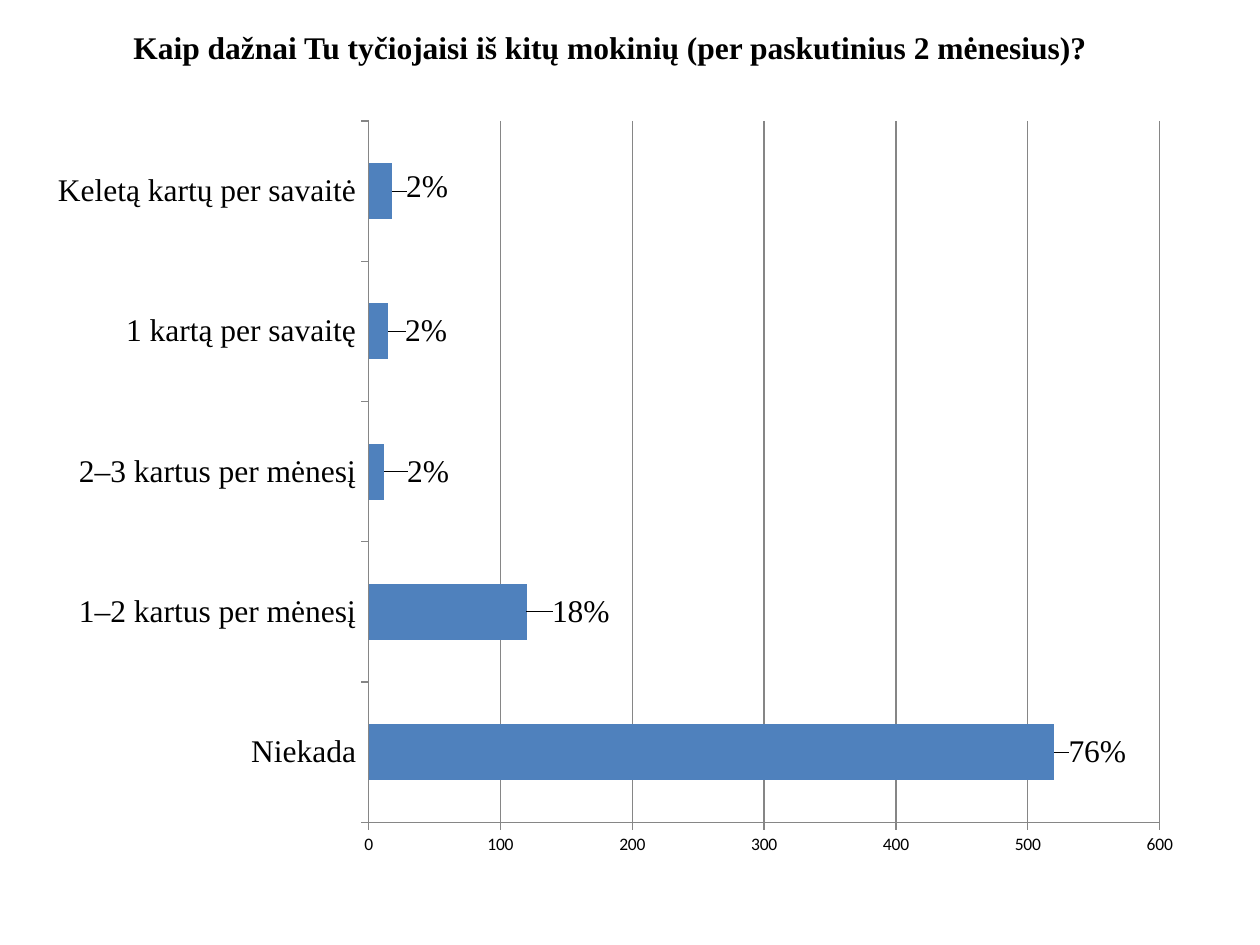
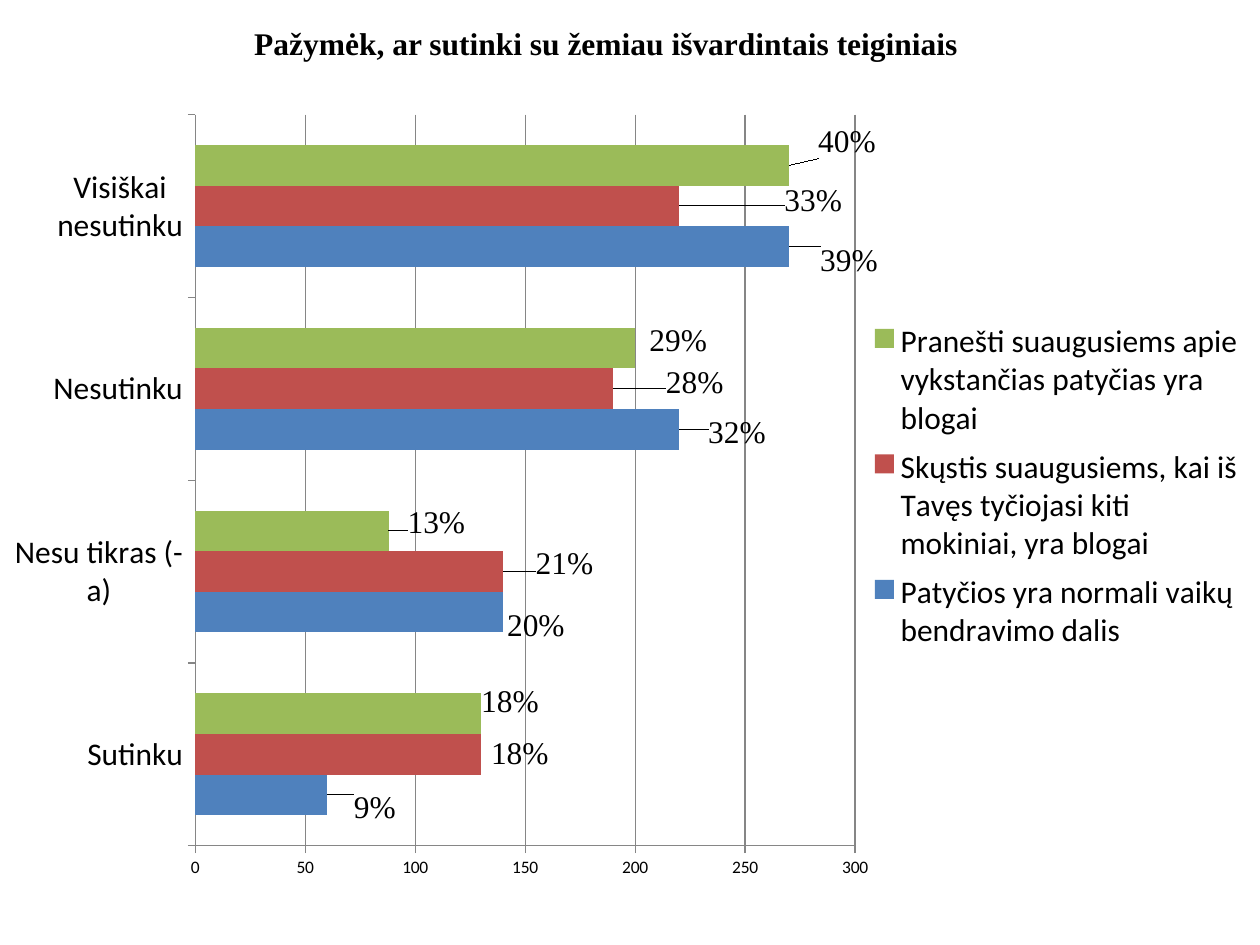
from dataclasses import dataclass
from pptx import Presentation
from pptx.chart.data import CategoryChartData
from pptx.dml.color import RGBColor
from pptx.enum.chart import XL_CHART_TYPE, XL_LABEL_POSITION, XL_LEGEND_POSITION, XL_TICK_MARK
from pptx.enum.text import MSO_ANCHOR, PP_ALIGN
from pptx.oxml import parse_xml
from pptx.oxml.ns import nsdecls
from pptx.util import Cm, Pt


@dataclass(frozen=True)
class Theme:
    serif: str = "Times New Roman"
    sans: str = "Calibri"
    text: RGBColor = RGBColor(0, 0, 0)
    grid: RGBColor = RGBColor(0x86, 0x86, 0x86)
    blue: RGBColor = RGBColor(0x4F, 0x81, 0xBD)
    red: RGBColor = RGBColor(0xC0, 0x50, 0x4D)
    green: RGBColor = RGBColor(0x9B, 0xBB, 0x59)
    large: Pt = Pt(18)
    small: Pt = Pt(10)


THEME = Theme()

# Each series: name, colour, values, percentages, label offsets (right, down) in cm
FREQUENCY = ["Niekada", "1–2 kartus per mėnesį", "2–3 kartus per mėnesį",
             "1 kartą per savaitę", "Keletą kartų per savaitė"]
FREQUENCY_SERIES = [
    ("Mokiniai", THEME.blue, [520, 120, 12, 15, 18], [76, 18, 2, 2, 2],
     [(0.19, 0), (0.41, 0), (0.36, 0), (0.24, 0), (0.18, -0.08)]),
]
AGREEMENT = ["Sutinku", "Nesu tikras (-a)", "Nesutinku", "Visiškai nesutinku"]
AGREEMENT_SERIES = [
    ("Patyčios yra normali vaikų bendravimo dalis", THEME.blue,
     [60, 140, 220, 270], [9, 20, 32, 39],
     [(0.44, 0.26), (-0.02, 0.28), (0.49, 0.08), (0.53, 0.3)]),
    ("Skųstis suaugusiems, kai iš Tavęs tyčiojasi kiti mokiniai, yra blogai", THEME.red,
     [130, 140, 190, 220], [18, 21, 28, 33],
     [(0.1, 0), (0.56, -0.16), (0.97, -0.12), (2.03, -0.1)]),
    ("Pranešti suaugusiems apie vykstančias patyčias yra blogai", THEME.green,
     [130, 88, 200, 270], [18, 13, 29, 40],
     [(-0.1, -0.24), (0.28, -0.16), (0.19, -0.14), (0.49, -0.48)]),
]

NO_LEADER_LINES = (
    f'<c:extLst {nsdecls("c")}><c:ext uri="{{CE6537A1-D6FC-4f65-9D91-7224C49458BB}}"'
    ' xmlns:c15="http://schemas.microsoft.com/office/drawing/2012/chart">'
    '<c15:showLeaderLines val="0"/></c:ext></c:extLst>')


def style_font(font, size, name, bold=False):
    font.size, font.name, font.bold = size, name, bold
    font.color.rgb = THEME.text


def manual_layout(**settings):
    parts = "".join(f'<c:{tag} val="{value}"/>' for tag, value in settings.items())
    return parse_xml(f'<c:layout {nsdecls("c")}><c:manualLayout>{parts}'
                     '</c:manualLayout></c:layout>')


def edge_layout(area, box, **settings):
    """Lay out an area, given in cm from the chart's corner."""
    x, y, w, h = (round(length / box[2 + i % 2], 4) for i, length in enumerate(area))
    return manual_layout(**settings, xMode="edge", yMode="edge", x=x, y=y, w=w, h=h)


def add_title(s, text, left, top):
    sp = s.shapes.add_textbox(Cm(left), Cm(top), Cm(21.6), Cm(1.2))
    tf = sp.text_frame
    tf.word_wrap = True
    tf.vertical_anchor = MSO_ANCHOR.TOP
    tf.margin_top = tf.margin_bottom = 0
    p = tf.paragraphs[0]
    p.text = text
    p.alignment = PP_ALIGN.CENTER
    style_font(p.runs[0].font, THEME.large, THEME.serif, bold=True)


def style_axes(chart, category_font):
    for axis in (chart.category_axis, chart.value_axis):
        axis.major_tick_mark = XL_TICK_MARK.OUTSIDE
        axis.minor_tick_mark = XL_TICK_MARK.NONE
        axis.format.line.color.rgb = THEME.grid
    style_font(chart.category_axis.tick_labels.font, THEME.large, category_font)
    style_font(chart.value_axis.tick_labels.font, THEME.small, THEME.sans)
    chart.value_axis.has_major_gridlines = True
    chart.value_axis.major_gridlines.format.line.color.rgb = THEME.grid


def label_bars(series, percentages, offsets, width, height):
    for i, percent in enumerate(percentages):
        label = series.points[i].data_label
        label.position = XL_LABEL_POSITION.OUTSIDE_END
        p = label.text_frame.paragraphs[0]
        p.text = f"{percent}%"
        style_font(p.runs[0].font, THEME.large, THEME.serif)
    # Move each label away from its bar end, without a leader line
    dLbls = series._element.xpath("c:dLbls")[0]
    for dLbl, (right, down) in zip(dLbls.xpath("c:dLbl"), offsets):
        dLbl.insert(1, manual_layout(x=round(right / width, 4), y=round(down / height, 4)))
    dLbls.append(parse_xml(NO_LEADER_LINES))


def add_bar_chart(s, box, plot_box, categories, rows, axis_max, step, category_font):
    data = CategoryChartData()
    data.categories = categories
    for name, _, values, _, _ in rows:
        data.add_series(name, values)
    chart = s.shapes.add_chart(XL_CHART_TYPE.BAR_CLUSTERED, *map(Cm, box), data).chart
    chart.has_title = False
    chart.has_legend = False
    style_font(chart.font, THEME.small, THEME.sans)
    style_axes(chart, category_font)
    chart.value_axis.minimum_scale = 0
    chart.value_axis.maximum_scale = axis_max
    chart.value_axis.major_unit = step

    # Inner plot area
    plot_area = chart._chartSpace.xpath("c:chart/c:plotArea")[0]
    for layout in plot_area.xpath("c:layout"):
        plot_area.remove(layout)
    plot_area.insert(0, edge_layout(plot_box, box, layoutTarget="inner"))

    # Bars and their labels
    plot = chart.plots[0]
    plot.gap_width, plot.overlap = 150, 0
    plot.vary_by_categories = False
    for series, (_, color, _, percentages, offsets) in zip(plot.series, rows):
        series.format.fill.solid()
        series.format.fill.fore_color.rgb = color
        label_bars(series, percentages, offsets, box[2], box[3])
    return chart


def add_legend(chart, area, box):
    chart.has_legend = True
    chart.legend.position = XL_LEGEND_POSITION.RIGHT
    chart.legend.include_in_layout = False
    style_font(chart.legend.font, THEME.large, THEME.sans)
    legend = chart.legend._element
    for layout in legend.xpath("c:layout"):
        legend.remove(layout)
    legend.insert(1, edge_layout(area, box))


def main():
    prs = Presentation()
    prs.slide_width, prs.slide_height = Cm(25.4), Cm(19.05)
    blank = prs.slide_layouts[6]

    # How often pupils bully others
    s = prs.slides.add_slide(blank)
    add_title(s, "Kaip dažnai Tu tyčiojaisi iš kitų mokinių (per paskutinius 2 mėnesius)?",
              1.5, 0.56)
    add_bar_chart(s, (0.71, 2.13, 23.39, 15.39), (6.72, 0.31, 15.95, 14.14),
                  FREQUENCY, FREQUENCY_SERIES, 600, 100, THEME.serif)

    # Agreement with statements
    s = prs.slides.add_slide(blank)
    add_title(s, "Pažymėk, ar sutinki su žemiau išvardintais teiginiais", 1.42, 0.49)
    box = (0.3, 1.93, 25.1, 16)
    chart = add_bar_chart(s, box, (3.56, 0.38, 13.35, 14.74),
                          AGREEMENT, AGREEMENT_SERIES, 300, 50, THEME.sans)
    add_legend(chart, (17.2, 4.35, 7.55, 7.05), box)

    prs.save("out.pptx")


if __name__ == "__main__":
    main()
